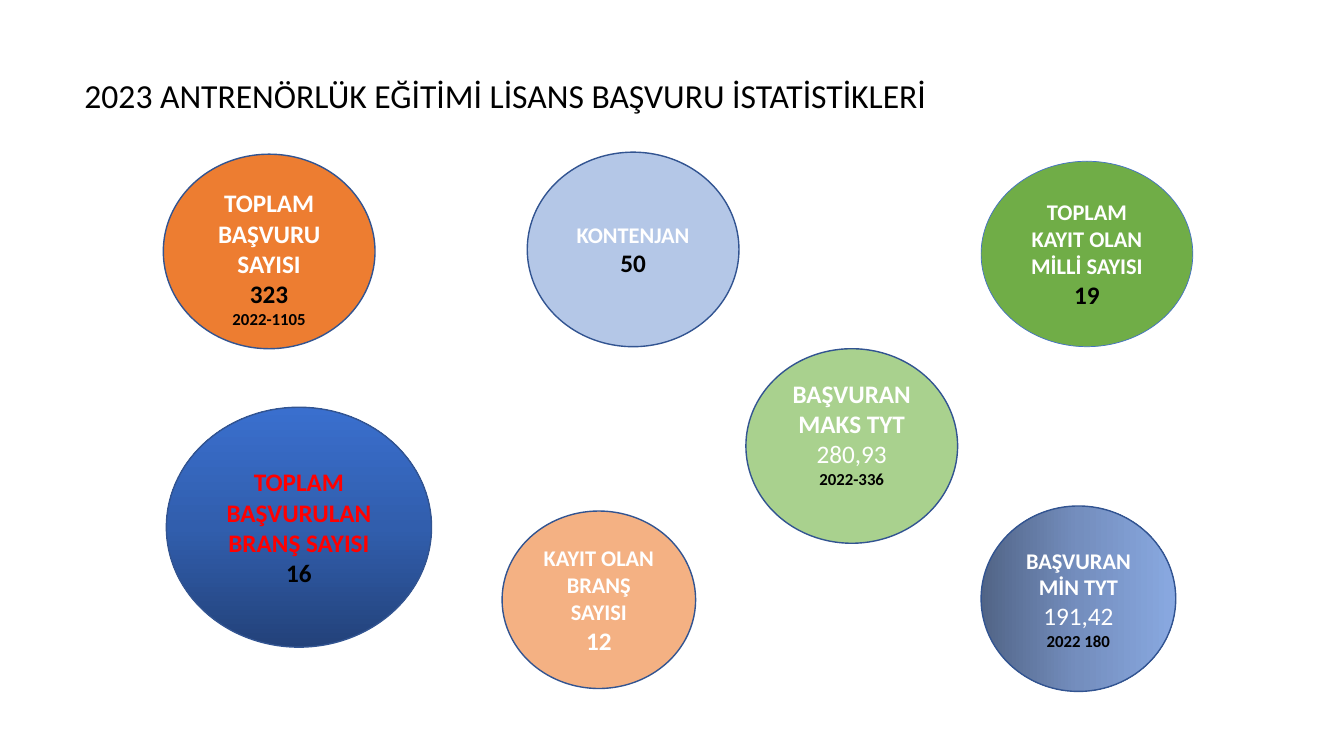
from copy import deepcopy

from pptx import Presentation
from pptx.dml.color import RGBColor
from pptx.enum.shapes import MSO_SHAPE
from pptx.enum.text import MSO_ANCHOR, PP_ALIGN
from pptx.util import Inches, Pt

OVAL = MSO_SHAPE.OVAL
TOP, MID = MSO_ANCHOR.TOP, MSO_ANCHOR.MIDDLE
LEFT, MID_X = PP_ALIGN.LEFT, PP_ALIGN.CENTER

THEME = {
    "font": "Calibri",
    "black": "000000", "white": "FFFFFF", "red": "FF0000",
    "orange": "ED7D31", "peach": "F4B183", "green": "70AD47",
    "mint": "A9D18E", "sky": "B4C7E7",
    "edge": "325491", "rim": "4472C4",
    "deep": ["23427A", "315EAD", "3A6FCE"],
    "steel": ["516486", "748EBE", "89A9E1"],
    "title": 24, "big": 18, "mid": 16, "small": 12,
}

deck = Presentation()
deck.slide_width, deck.slide_height = Inches(13.33), Inches(7.5)
slide = deck.slides.add_slide(deck.slide_layouts[6])


def place(x, y, w, h):
    """Turn percentages of the slide into lengths."""
    wide, high = deck.slide_width, deck.slide_height
    return [int(part * side / 100)
            for part, side in zip((x, y, w, h), (wide, high, wide, high))]


def write(shape, lines, align, anchor):
    """Fill a shape with lines of (text, size, colour, bold)."""
    frame = shape.text_frame
    frame.word_wrap, frame.vertical_anchor = True, anchor
    for i, (text, size, tint, bold) in enumerate(lines):
        para = frame.add_paragraph() if i else frame.paragraphs[0]
        para.alignment = align
        run = para.add_run()
        run.text = text
        look = {"name": THEME["font"], "size": Pt(THEME[size]), "bold": bold}
        for key, value in look.items():
            setattr(run.font, key, value)
        run.font.color.rgb = RGBColor.from_string(THEME[tint])


# Title
title = slide.shapes.add_textbox(*place(5.55, 8.93, 70.5, 8))
write(title, [("2023 ANTRENÖRLÜK EĞİTİMİ LİSANS BAŞVURU İSTATİSTİKLERİ",
               "title", "black", False)], LEFT, MID)
title.text_frame.paragraphs[0].line_spacing = 0.9

# Circles: box in percent, fill, format values, lines
circles = [
    ((12.15, 20.4, 15.75, 25.73), "orange", {"anchor": TOP}, [
        ("TOPLAM BAŞVURU SAYISI", "big", "white", True),
        ("323", "big", "black", True),
        ("2022-1105", "small", "black", True)]),
    ((73, 21.33, 15.75, 24.53), "green", {"line": "rim", "width": 0.5}, [
        ("TOPLAM KAYIT OLAN MİLLİ SAYISI", "mid", "white", True),
        ("19", "big", "black", True)]),
    ((55.5, 46.13, 15.75, 25.73), "mint", {"foot": 0.3}, [
        ("BAŞVURAN MAKS TYT", "big", "white", True),
        ("280,93", "big", "white", False),
        ("2022-336", "small", "black", True)]),
    ((12.38, 53.87, 19.73, 31.73), "deep", {"angle": 90}, [
        ("TOPLAM BAŞVURULAN BRANŞ SAYISI", "big", "red", True),
        ("16", "big", "black", True)]),
    ((73, 66.93, 14.48, 24.53), "steel", {"angle": 0}, [
        ("BAŞVURAN MİN TYT", "mid", "white", True),
        ("191,42", "big", "white", False),
        ("2022 180", "small", "black", True)]),
    ((39.23, 20.13, 15.75, 25.73), "sky", {}, [
        ("KONTENJAN", "mid", "white", True),
        ("50", "big", "black", True)]),
    ((37.36, 67.6, 14.4, 23.47), "peach", {}, [
        ("KAYIT OLAN BRANŞ SAYISI", "mid", "white", True),
        ("12", "big", "white", True)]),
]
base = {"anchor": MID, "line": "edge", "width": 1, "foot": 0.05, "angle": None}

for box, paint, extra, lines in circles:
    form = {**base, **extra}
    oval = slide.shapes.add_shape(OVAL, *place(*box))
    oval.shadow.inherit = False

    # Plain fill, or a gradient of three stops
    if form["angle"] is None:
        oval.fill.solid()
        oval.fill.fore_color.rgb = RGBColor.from_string(THEME[paint])
    else:
        oval.fill.gradient()
        oval.fill.gradient_angle = form["angle"]
        stops = oval._element.spPr.gradFill.gsLst
        stops.append(deepcopy(stops[0]))
        for i, stop in enumerate(oval.fill.gradient_stops):
            stop.position = i / 2
            stop.color.rgb = RGBColor.from_string(THEME[paint][i])

    # Outline and text
    oval.line.color.rgb = RGBColor.from_string(THEME[form["line"]])
    oval.line.width = Pt(form["width"])
    oval.text_frame.margin_bottom = Inches(form["foot"])
    write(oval, lines, MID_X, form["anchor"])

deck.save("out.pptx")
